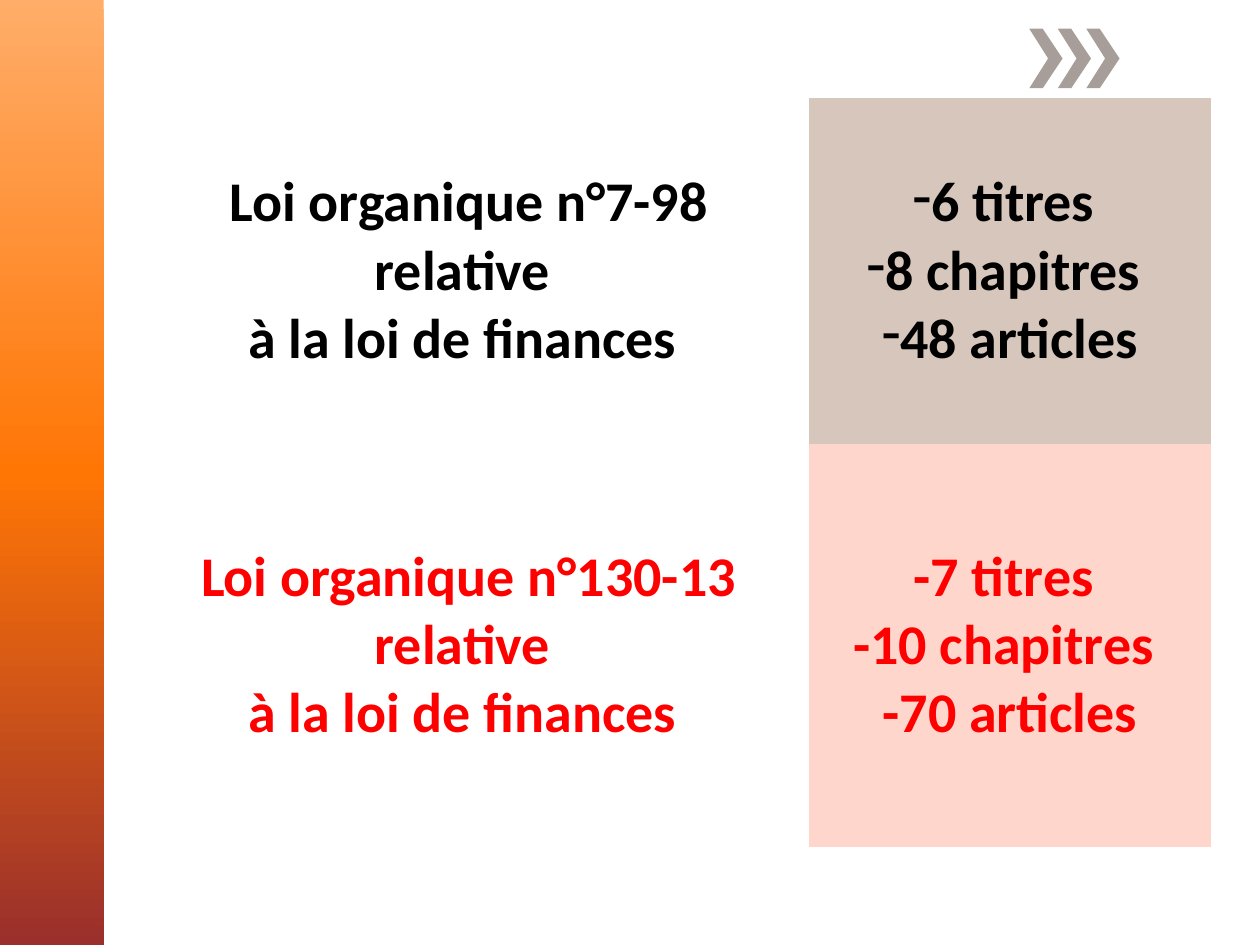
from copy import deepcopy

from pptx import Presentation
from pptx.dml.color import RGBColor
from pptx.enum import shapes, text
from pptx.oxml import ns, xmlchemy
from pptx.util import Cm, Pt


def rgb(value):
    return RGBColor.from_string(value)


def add_dash_bullet(paragraph):
    properties = paragraph._p.get_or_add_pPr()
    properties.set("marL", "0")
    properties.set("indent", "0")
    bullet = xmlchemy.OxmlElement("a:buChar")
    bullet.set("char", "-")
    properties.append(xmlchemy.OxmlElement("a:buFontTx"))
    properties.append(bullet)


presentation = Presentation()
presentation.slide_width = Cm(25.4)
presentation.slide_height = Cm(19.05)
slide = presentation.slides.add_slide(presentation.slide_layouts[6])

# Side band with a three-colour vertical gradient
band = slide.shapes.add_shape(
    shapes.MSO_SHAPE.RECTANGLE, 0, 0, Cm(2.09), presentation.slide_height)
band.shadow.inherit = False
band.line.fill.background()
band.fill.gradient()
band.fill.gradient_angle = 270
stop_list = band._element.spPr.find(".//" + ns.qn("a:gsLst"))
stop_list.append(deepcopy(stop_list[-1]))
band_colours = ["FFAD69", "FF7605", "9A2F2C"]
for stop, position, colour in zip(band.fill.gradient_stops, [0, 0.5, 1], band_colours):
    stop.position = position
    stop.color.rgb = rgb(colour)

# Three chevrons, top right
chevrons = slide.shapes.add_group_shape()
chevron_top, chevron_height = 0.58, 1.2
for index in range(3):
    left = 20.75 + 0.575 * index
    middle = chevron_top + chevron_height / 2
    bottom = chevron_top + chevron_height
    outline = [(left, chevron_top), (left + 0.38, middle), (left, bottom),
               (left + 0.27, bottom), (left + 0.67, middle)]
    builder = chevrons.shapes.build_freeform(
        Cm(left + 0.27), Cm(chevron_top), scale=1.0)
    builder.add_line_segments([(Cm(x), Cm(y)) for x, y in outline], close=True)
    chevron = builder.convert_to_shape()
    chevron.shadow.inherit = False
    chevron.fill.solid()
    chevron.fill.fore_color.rgb = rgb("A79D99")
    chevron.line.fill.background()

# Comparison of the two laws: lines, fill, text colour, dash bullets
rows = [
    [(["Loi organique n°7-98 relative ", "à la loi de finances "],
      "FFFFFF", "000000", False),
     (["6 titres ", "8 chapitres ", "48 articles"], "D7C6BC", "000000", True)],
    [(["Loi organique n°130-13 relative ", "à la loi de finances "],
      "FFFFFF", "FF0000", False),
     (["-7 titres ", "-10 chapitres ", "-70 articles"], "FFD6CC", "FF0000", False)],
]
column_widths = [13.72, 8.1]
row_heights = [6.97, 8.12]
frame = slide.shapes.add_table(
    len(rows), len(column_widths), Cm(2.59), Cm(1.98),
    Cm(sum(column_widths)), Cm(sum(row_heights)))
table = frame.table
table.first_row = False
table.horz_banding = False
for column, width in zip(table.columns, column_widths):
    column.width = Cm(width)
for row, height in zip(table.rows, row_heights):
    row.height = Cm(height)

for row_index, row_cells in enumerate(rows):
    for column_index, (lines, fill, colour, bulleted) in enumerate(row_cells):
        cell = table.cell(row_index, column_index)
        cell.fill.solid()
        cell.fill.fore_color.rgb = rgb(fill)
        cell.vertical_anchor = text.MSO_ANCHOR.MIDDLE
        for side in ("a:lnL", "a:lnR", "a:lnT", "a:lnB"):
            border = xmlchemy.OxmlElement(side)
            border.append(xmlchemy.OxmlElement("a:noFill"))
            cell_properties = cell._tc.tcPr
            cell_properties.insert(len(cell_properties) - 1, border)
        for line_index, line in enumerate(lines):
            paragraphs = cell.text_frame
            paragraph = (paragraphs.add_paragraph() if line_index
                         else paragraphs.paragraphs[0])
            paragraph.alignment = text.PP_ALIGN.CENTER
            if bulleted:
                add_dash_bullet(paragraph)
            run = paragraph.add_run()
            run.text = line
            run.font.name = "Calibri"
            run.font.size = Pt(32)
            run.font.bold = True
            run.font.color.rgb = rgb(colour)

presentation.save("out.pptx")
